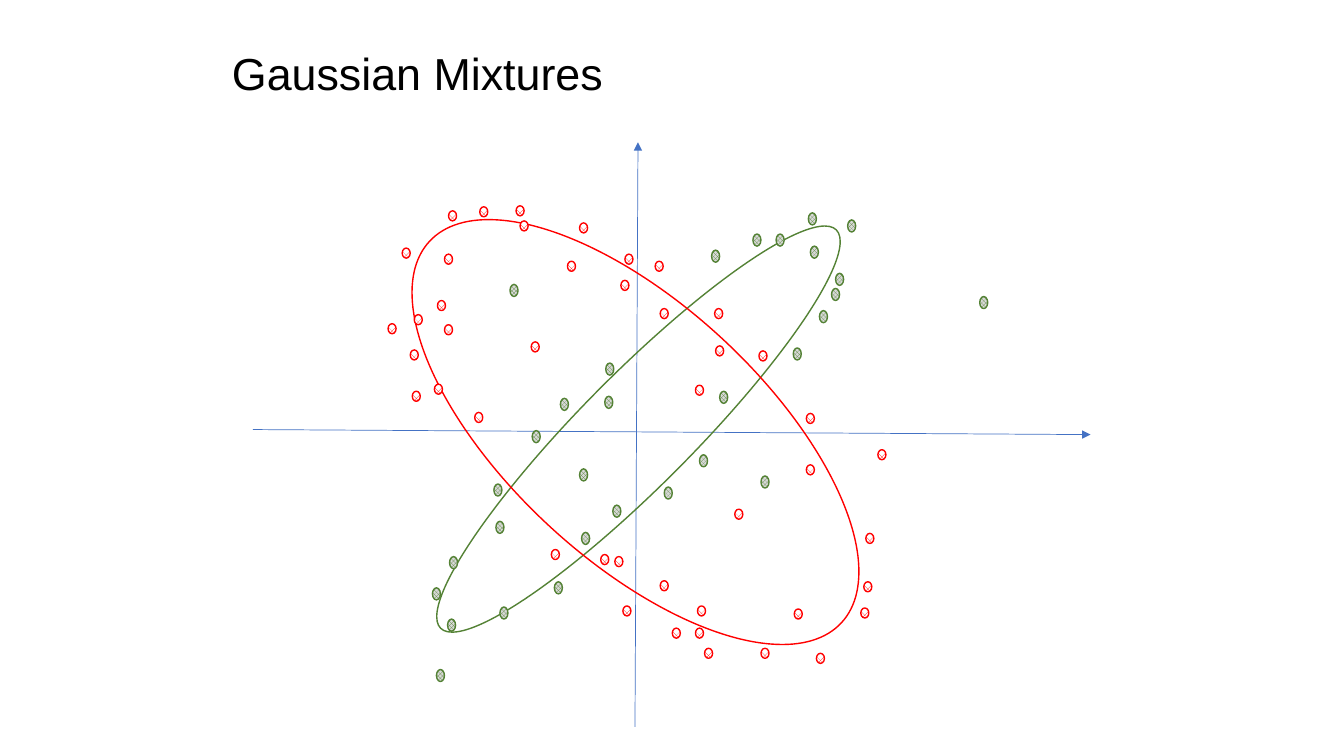
from lxml import etree
from pptx import Presentation
from pptx.dml.color import RGBColor
from pptx.enum.dml import MSO_PATTERN
from pptx.enum.shapes import MSO_CONNECTOR, MSO_SHAPE
from pptx.enum.text import MSO_ANCHOR, PP_ALIGN
from pptx.oxml.ns import qn
from pptx.util import Cm, Pt

UNIT = 2.54  # centimetres in one plot unit
RED, GREEN, BLUE = "FF0000", "548235", "4472C4"

# Axes: start and end in plot units, measured from the plot's corner
AXES = [((3.8, 5.81), (3.83, 0.01)), ((0.01, 2.86), (8.32, 2.91))]

# Upper left corners of the samples, in plot units
RED_SAMPLES = [
    (1.91, 1.12), (1.49, 1.06), (1.61, 1.72), (2.66, 0.79), (1.95, 0.69),
    (1.81, 2.41), (3.25, 0.81), (3.66, 1.38), (1.84, 1.58), (3.13, 1.19),
    (1.91, 1.82), (1.35, 1.81), (2.21, 2.69), (4.0, 1.19), (2.97, 4.05),
    (3.6, 4.12), (3.68, 4.61), (4.17, 4.83), (4.05, 4.36), (4.42, 4.61),
    (4.05, 1.66), (4.59, 1.66), (4.49, 5.03), (5.38, 4.64), (5.6, 5.08),
    (6.07, 4.37), (3.46, 4.1), (2.62, 0.64), (4.6, 2.03), (3.7, 1.12),
    (5.03, 2.08), (4.4, 2.42), (2.26, 0.65), (6.21, 3.06), (5.5, 3.21),
    (6.09, 3.89), (5.5, 2.7), (4.4, 4.83), (4.79, 3.65), (2.77, 1.99),
    (5.05, 5.03), (6.04, 4.63), (1.57, 2.07), (1.59, 2.48),
]
GREEN_SAMPLES = [
    (1.96, 4.12), (3.06, 2.55), (4.09, 3.43), (2.46, 4.62), (3.5, 2.53),
    (1.79, 4.43), (5.2, 0.92), (5.63, 1.68), (5.75, 1.46), (5.91, 0.78),
    (2.56, 1.42), (4.97, 0.92), (5.52, 0.71), (2.78, 2.87), (3.58, 3.61),
    (4.64, 2.48), (5.54, 1.04), (3.0, 4.37), (1.94, 4.74), (3.27, 3.88),
    (2.42, 3.77), (2.4, 3.4), (4.44, 3.11), (3.51, 2.2), (5.37, 2.05),
    (3.25, 3.25), (1.83, 5.24), (5.79, 1.31), (7.22, 1.54), (5.05, 3.32),
    (4.56, 1.08),
]

# One entry per Gaussian: its contour (left, top, width, height) and samples
MIXTURE = [
    dict(color=GREEN, contour=(1.05, 2.3, 5.57, 1.11), rotation=314.8,
         samples=GREEN_SAMPLES, size=(0.08, 0.12),
         pattern=MSO_PATTERN.TRELLIS, back="D9D9D9"),
    dict(color=RED, contour=(1.02, 1.62, 5.57, 2.53), rotation=42.8,
         samples=RED_SAMPLES, size=(0.08, 0.1),
         pattern=MSO_PATTERN.PERCENT_25, back="FFFFFF"),
]


def rgb(value):
    return RGBColor.from_string(value)


def add_title(slide, left, top, width, height):
    title = slide.shapes.title
    place = dict(left=left, top=top, width=width, height=height)
    for name, value in place.items():
        setattr(title, name, Cm(value))
    title.text_frame.text = "Gaussian Mixtures"
    title.text_frame.vertical_anchor = MSO_ANCHOR.MIDDLE
    heading = title.text_frame.paragraphs[0]
    heading.alignment = PP_ALIGN.LEFT
    for name, value in dict(name="Arial", size=Pt(32), bold=False).items():
        setattr(heading.font, name, value)
    heading.font.color.rgb = rgb("000000")


def add_axis(slide, left, top, start, end):
    ends = [Cm(corner + UNIT * step)
            for point in (start, end)
            for corner, step in zip((left, top), point)]
    axis = slide.shapes.add_connector(MSO_CONNECTOR.STRAIGHT, *ends)
    axis.line.color.rgb = rgb(BLUE)
    axis.line.width = Pt(0.5)
    # Arrowhead and no shadow
    outline = axis.line._get_or_add_ln()
    etree.SubElement(outline, qn("a:tailEnd"), type="triangle")
    etree.SubElement(axis._element.spPr, qn("a:effectLst"))


def add_ellipse(slide, left, top, bounds, color):
    x, y, width, height = (UNIT * length for length in bounds)
    ellipse = slide.shapes.add_shape(
        MSO_SHAPE.OVAL, Cm(left + x), Cm(top + y), Cm(width), Cm(height))
    ellipse.shadow.inherit = False
    ellipse.line.color.rgb = rgb(color)
    ellipse.line.width = Pt(1)
    return ellipse


def add_plot(slide, left, top):
    for start, end in AXES:
        add_axis(slide, left, top, start, end)

    # Contours of both Gaussians
    for part in MIXTURE:
        contour = add_ellipse(slide, left, top, part["contour"], part["color"])
        contour.rotation = part["rotation"]
        contour.fill.background()

    # Samples, the red ones below the green ones
    for part in reversed(MIXTURE):
        for corner in part["samples"]:
            sample = add_ellipse(
                slide, left, top, corner + part["size"], part["color"])
            sample.fill.patterned()
            sample.fill.pattern = part["pattern"]
            sample.fill.fore_color.rgb = rgb(part["color"])
            sample.fill.back_color.rgb = rgb(part["back"])


def main():
    deck = Presentation()
    deck.slide_width, deck.slide_height = Cm(33.87), Cm(19.05)
    slide = deck.slides.add_slide(deck.slide_layouts[5])
    add_title(slide, left=5.59, top=1.02, width=23.32, height=1.63)
    add_plot(slide, left=6.35, top=3.56)
    deck.save("out.pptx")


if __name__ == "__main__":
    main()
